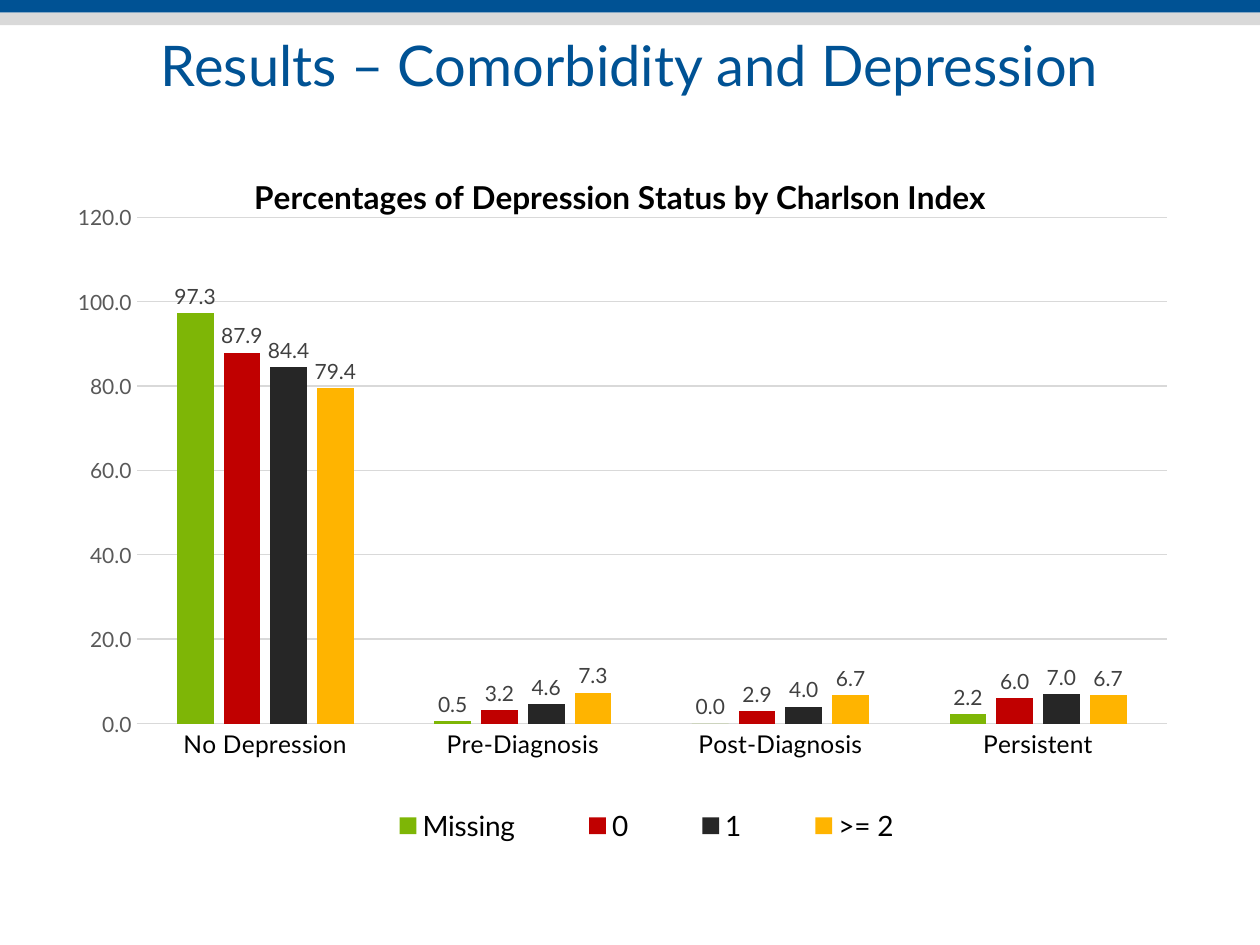
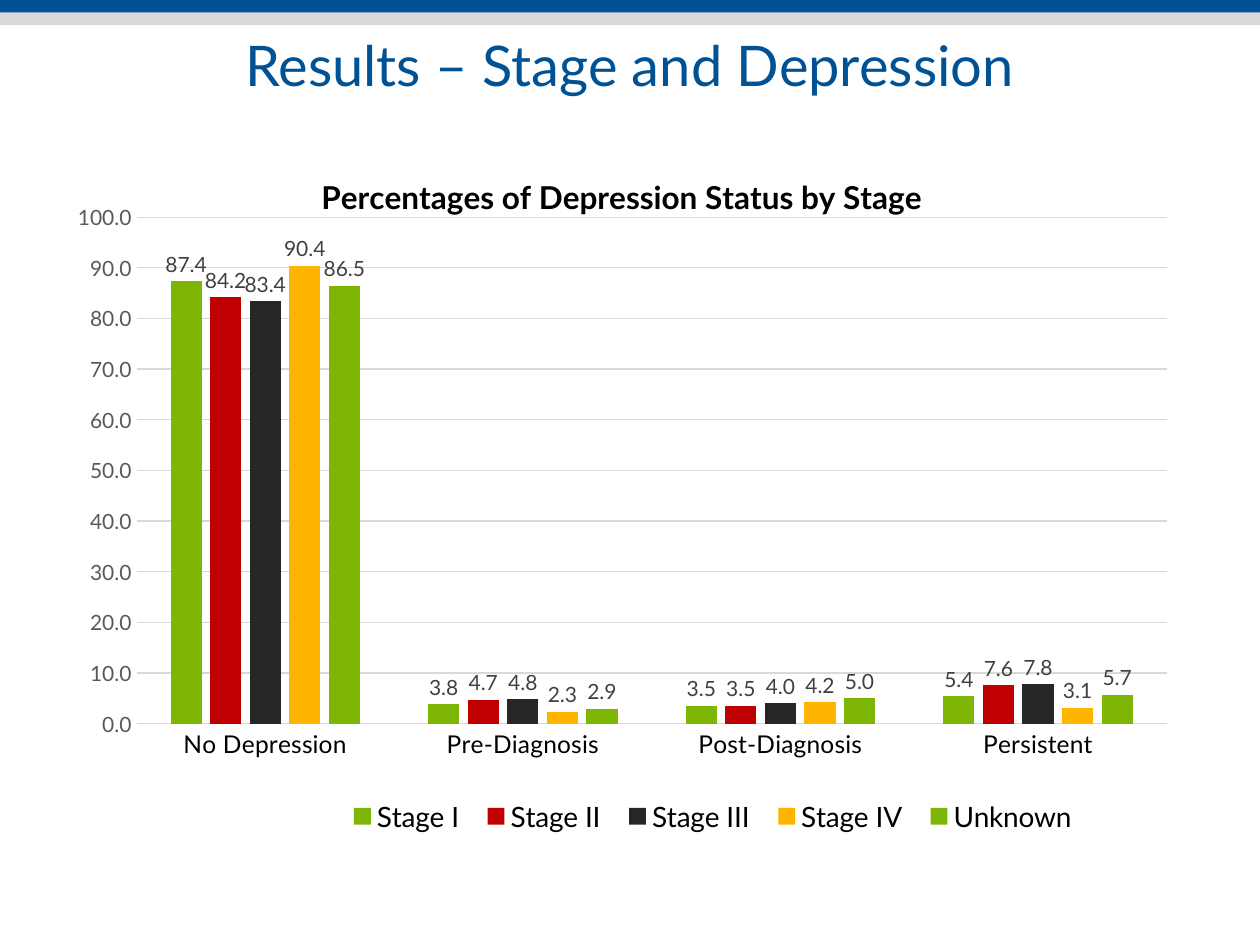
from dataclasses import dataclass

from lxml import etree
from pptx import Presentation
from pptx import util as u
from pptx.chart.data import CategoryChartData
from pptx.dml.color import RGBColor
from pptx.enum import chart as charts, shapes, text


@dataclass(frozen=True)
class Theme:
    font: str = "Lato"
    blue: str = "005294"
    grey: str = "D9D9D9"
    black: str = "000000"
    axis_text: str = "595959"
    label_text: str = "404040"
    series: tuple = ("7EB606", "C00000", "262626", "FFB400")
    title_size: float = 32
    chart_title_size: float = 18
    legend_size: float = 16
    category_size: float = 14
    value_size: float = 12
    base_size: float = 10


THEME = Theme()
WIDTH, HEIGHT = 720, 540
BAND_HEIGHT = 7.2
TITLE_BOX = (0, 13.7, WIDTH, 87.8)
CHART_BOX = (39.6, 79.2, 640, 420)
PLOT_AREA = {"x": 0.06, "y": 0.107, "w": 0.92, "h": 0.689}
CATEGORIES = ("No Depression", "Pre-Diagnosis", "Post-Diagnosis", "Persistent")

RESULTS = (
    {
        "title": "Results – Comorbidity and Depression",
        "chart_title": "Percentages of Depression Status by Charlson Index",
        "chart_title_at": {"x": 0.16, "y": 0.04},
        "legend_at": {"x": 0.237, "y": 0.9, "w": 0.557, "h": 0.07},
        "axis_maximum": 120,
        "axis_step": 20,
        "series": {
            "Missing": (97.3, 0.5, 0.0, 2.2),
            "0": (87.9, 3.2, 2.9, 6.0),
            "1": (84.4, 4.6, 4.0, 7.0),
            ">= 2": (79.4, 7.3, 6.7, 6.7),
        },
    },
    {
        "title": "Results – Stage and Depression",
        "chart_title": "Percentages of Depression Status by Stage",
        "chart_title_at": {"x": 0.22, "y": 0.04},
        "legend_at": {"x": 0.237, "y": 0.887, "w": 0.675, "h": 0.07},
        "axis_maximum": 100,
        "axis_step": 10,
        "series": {
            "Stage I": (87.4, 3.8, 3.5, 5.4),
            "Stage II": (84.2, 4.7, 3.5, 7.6),
            "Stage III": (83.4, 4.8, 4.0, 7.8),
            "Stage IV": (90.4, 2.3, 4.2, 3.1),
            "Unknown": (86.5, 2.9, 5.0, 5.7),
        },
    },
)


# Formatting helpers
def set_values(target, values):
    for name, value in values.items():
        setattr(target, name, value)


def set_font(font, size, color, bold=False):
    set_values(font, {"name": THEME.font, "size": u.Pt(size), "bold": bold})
    font.color.rgb = RGBColor.from_string(color)


def set_line(line):
    line.width = u.Pt(0.75)
    line.color.rgb = RGBColor.from_string(THEME.grey)


def set_layout(parent, index, fractions, inner=False):
    """Fix a chart part at fractions of the chart's size."""
    namespace = parent.nsmap["c"]

    def tag(name):
        return f"{{{namespace}}}{name}"

    for old in parent.findall(tag("layout")):
        parent.remove(old)
    layout = etree.Element(tag("layout"))
    manual = etree.SubElement(layout, tag("manualLayout"))
    if inner:
        etree.SubElement(manual, tag("layoutTarget"), val="inner")
    for name in ("x", "y"):
        etree.SubElement(manual, tag(f"{name}Mode"), val="edge")
    for name, value in fractions.items():
        etree.SubElement(manual, tag(name), val=str(value))
    parent.insert(index, layout)


# Bands across the top
def add_bands(slide, box):
    left, top, width, height = box
    for row, color in enumerate((THEME.blue, THEME.grey)):
        band = slide.shapes.add_shape(
            shapes.MSO_SHAPE.RECTANGLE,
            u.Pt(left), u.Pt(top + row * height), u.Pt(width), u.Pt(height))
        band.shadow.inherit = False
        band.fill.solid()
        band.fill.fore_color.rgb = RGBColor.from_string(color)
        band.line.fill.background()


# Slide title
def set_title(slide, box, wording):
    title = slide.shapes.title
    set_values(title, dict(zip(("left", "top", "width", "height"), map(u.Pt, box))))
    frame = title.text_frame
    frame.text = wording
    set_values(frame, {
        "word_wrap": True,
        "auto_size": text.MSO_AUTO_SIZE.NONE,
        "vertical_anchor": text.MSO_ANCHOR.TOP,
    })
    paragraph = frame.paragraphs[0]
    paragraph.alignment = text.PP_ALIGN.CENTER
    set_font(paragraph.runs[0].font, THEME.title_size, THEME.blue)


# Chart parts
def format_heading(chart, result):
    chart.has_title = True
    heading = chart.chart_title
    heading.text_frame.text = result["chart_title"]
    run = heading.text_frame.paragraphs[0].runs[0]
    set_font(run.font, THEME.chart_title_size, THEME.black, bold=True)
    set_layout(heading._element, 1, result["chart_title_at"])


def format_legend(chart, result):
    chart.has_legend = True
    legend = chart.legend
    set_values(legend, {
        "position": charts.XL_LEGEND_POSITION.BOTTOM,
        "include_in_layout": False,
    })
    set_font(legend.font, THEME.legend_size, THEME.black)
    set_layout(legend._element, 1, result["legend_at"])


def format_axes(chart, result):
    category_axis, value_axis = chart.category_axis, chart.value_axis
    for axis in (category_axis, value_axis):
        set_values(axis, {
            "major_tick_mark": charts.XL_TICK_MARK.NONE,
            "minor_tick_mark": charts.XL_TICK_MARK.NONE,
        })
    set_font(category_axis.tick_labels.font, THEME.category_size, THEME.black)
    set_line(category_axis.format.line)
    set_values(value_axis, {
        "minimum_scale": 0,
        "maximum_scale": result["axis_maximum"],
        "major_unit": result["axis_step"],
        "has_major_gridlines": True,
    })
    set_font(value_axis.tick_labels.font, THEME.value_size, THEME.axis_text)
    set_values(value_axis.tick_labels, {
        "number_format": "0.0", "number_format_is_linked": False})
    value_axis.format.line.fill.background()
    set_line(value_axis.major_gridlines.format.line)


def format_columns(chart):
    plot = chart.plots[0]
    set_values(plot, {
        "gap_width": 219, "overlap": -27,
        "vary_by_categories": False, "has_data_labels": True,
    })
    set_values(plot.data_labels, {
        "show_value": True,
        "number_format": "0.0",
        "number_format_is_linked": False,
        "position": charts.XL_LABEL_POSITION.OUTSIDE_END,
    })
    set_font(plot.data_labels.font, THEME.value_size, THEME.label_text)
    for index, series in enumerate(plot.series):
        color = THEME.series[index % len(THEME.series)]
        series.invert_if_negative = False
        series.format.fill.solid()
        series.format.fill.fore_color.rgb = RGBColor.from_string(color)


def add_depression_chart(slide, box, result):
    data = CategoryChartData(number_format="0.0")
    data.categories = CATEGORIES
    for name, percentages in result["series"].items():
        data.add_series(name, percentages)
    chart = slide.shapes.add_chart(
        charts.XL_CHART_TYPE.COLUMN_CLUSTERED, *map(u.Pt, box), data).chart
    set_font(chart.font, THEME.base_size, THEME.black)
    format_heading(chart, result)
    format_legend(chart, result)
    format_axes(chart, result)
    format_columns(chart)
    set_layout(chart._chartSpace.chart.plotArea, 0, PLOT_AREA, inner=True)


# Result slide
def add_result_slide(presentation, result):
    slide = presentation.slides.add_slide(presentation.slide_layouts[5])
    add_bands(slide, (0, 0, WIDTH, BAND_HEIGHT))
    set_title(slide, TITLE_BOX, result["title"])
    add_depression_chart(slide, CHART_BOX, result)


def main():
    presentation = Presentation()
    set_values(presentation, {
        "slide_width": u.Pt(WIDTH), "slide_height": u.Pt(HEIGHT)})
    for result in RESULTS:
        add_result_slide(presentation, result)
    presentation.save("out.pptx")


if __name__ == "__main__":
    main()
